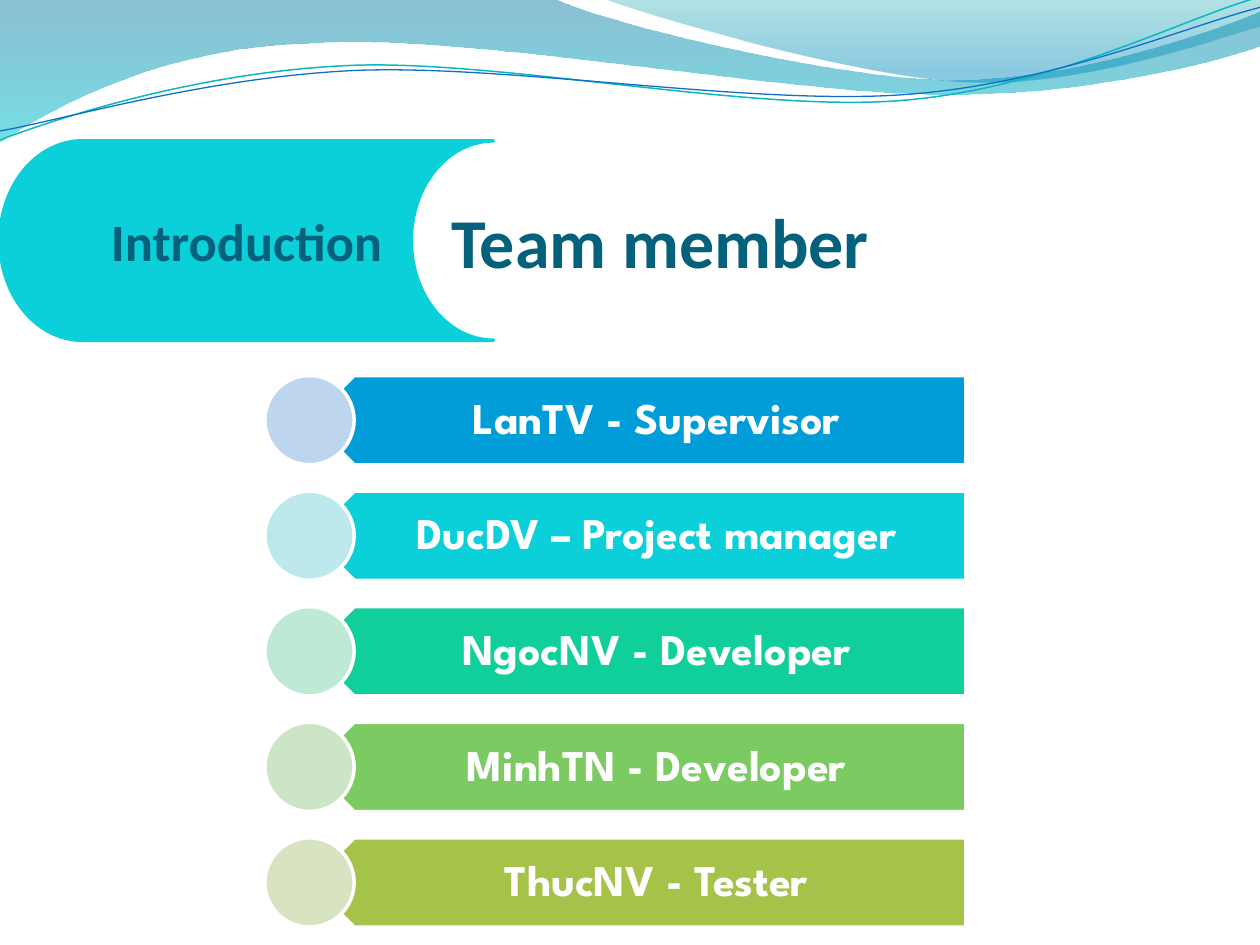
from math import cos, radians, sin

from lxml.etree import SubElement
from pptx import Presentation
from pptx.dml.color import RGBColor
from pptx.enum.shapes import MSO_SHAPE as Preset
from pptx.enum.text import MSO_ANCHOR as Anchor, PP_ALIGN as Align
from pptx.oxml.ns import qn
from pptx.util import Cm, Pt

COLORS = {
    "white": "FFFFFF", "heading": "04617B", "tab": "0BD0D9",
    "teal line": "0AB8BF", "blue line": "0F6FC6",
}

# name and role, bar colour, circle colour
MEMBERS = [
    ("LanTV - Supervisor", "009DD9", "BDD5ED"),
    ("DucDV – Project manager", "0BD0D9", "BDE9ED"),
    ("NgocNV - Developer", "10CF9B", "BDE9D5"),
    ("MinhTN - Developer", "7CCA62", "CCE6C5"),
    ("ThucNV - Tester", "A5C249", "D8E3C1"),
]

# Outlines in cm: a list of one point is a corner, of three a Bezier segment.
# Gradient stops: position, colour, opacity in percent.
WAVES = [
    ([[(0, 0)], [(11.18, -0.03)],
      [(12.09, 0.43), (16.87, 1.6), (19.25, 1.6)],
      [(21.67, 1.6), (24.33, 0.66), (25.4, 0.23)],
      [(25.43, 0.91)],
      [(24.97, 1.12), (22.1, 1.93), (18.95, 1.9)],
      [(15.8, 1.9), (9.7, 0.71), (6.53, 0.86)],
      [(3.28, 0.91), (1.17, 2.11), (-0.03, 2.87)],
      [(0, 0)]],
     [(0, "0074A1", 45), (1, "00C6CF", 55)]),
    ([[(12.17, -0.03)],
      [(12.93, 0.28), (17.32, 1.57), (19.53, 1.65)],
      [(21.74, 1.75), (24.41, 0.81), (25.4, 0.53)],
      [(25.4, 0)], [(12.17, -0.03)]],
     [(0, "00A1A9", 30), (0.8, "008BBF", 45)]),
]
# outline as seen, centre of its frame, colour, width
STRANDS = [
    ([[(0, 2.82)],
      [(1.22, 2.36), (4.01, 1.45), (7.04, 1.32)],
      [(10.03, 1.19), (15.06, 2.26), (18.11, 2.03)],
      [(21.16, 1.8), (23.83, 0.38), (25.35, -0.05)]],
     (12.67, 1.46), "teal line", 0.85),
    ([[(0, 2.64)],
      [(1.19, 2.44), (4.17, 1.55), (7.19, 1.42)],
      [(10.24, 1.3), (15.16, 2.13), (18.21, 1.91)],
      [(21.23, 1.7), (23.9, 0.53), (25.4, 0.15)]],
     (12.69, 1.5), "blue line", 0.75),
]
STRAND_TILT = 2.7

ROW_TOP, ROW_PITCH, ROW_HEIGHT = 7.57, 2.33, 1.8
CIRCLE_LEFT, BAR_LEFT, BAR_WIDTH = 5.34, 6.24, 13.23
LABEL_LEFT, LABEL_WIDTH = 6.69, 12.78


def rgb(color):
    return RGBColor.from_string(COLORS.get(color, color))


def turn(point, centre, degrees):
    """Turn a point clockwise about a centre."""
    x, y = point[0] - centre[0], point[1] - centre[1]
    c, s = cos(radians(degrees)), sin(radians(degrees))
    return centre[0] + x * c - y * s, centre[1] + x * s + y * c


def add_outline(shapes, outline, close):
    """Draw all points as corners, then join each three into a curve."""
    points = [(Cm(x), Cm(y)) for part in outline for x, y in part]
    builder = shapes.build_freeform(*points[0])
    builder.add_line_segments(points[1:], close=close)
    shape = builder.convert_to_shape()
    shape.shadow.inherit = False
    corners = iter(list(shape.element.iter(qn("a:lnTo"))))
    for part in outline[1:]:
        first, *others = [next(corners) for _ in part]
        if others:
            first.tag = qn("a:cubicBezTo")
        for other in others:
            first.append(other[0])
            other.getparent().remove(other)
    return shape


def add_wave(shapes, outline, stops):
    wave = add_outline(shapes, outline, True)
    wave.line.fill.background()
    wave.fill.gradient()
    wave.fill.gradient_angle = 270
    for stop, (position, color, _) in zip(wave.fill.gradient_stops, stops):
        stop.position = position
        stop.color.rgb = rgb(color)
    for node, (_, _, opacity) in zip(wave.element.iter(qn("a:srgbClr")), stops):
        SubElement(node, qn("a:alpha"), val=str(opacity * 1000))


def add_strand(shapes, outline, centre, color, width):
    level = [[turn(point, centre, STRAND_TILT) for point in part]
             for part in outline]
    strand = add_outline(shapes, level, False)
    strand.rotation = 360 - STRAND_TILT
    strand.fill.background()
    strand.line.color.rgb = rgb(color)
    strand.line.width = Pt(width)


def add_preset(shapes, preset, box, fill, line):
    shape = shapes.add_shape(preset, *map(Cm, box))
    shape.shadow.inherit = False
    shape.fill.solid()
    shape.fill.fore_color.rgb = rgb(fill)
    shape.line.color.rgb = rgb(line)
    shape.line.width = Pt(2)
    return shape


def write(shape, text, font, size, color, align, anchor, insets=None):
    frame = shape.text_frame
    frame.word_wrap = True
    frame.vertical_anchor = anchor
    if insets:
        (frame.margin_left, frame.margin_top,
         frame.margin_right, frame.margin_bottom) = map(Cm, insets)
    para = frame.paragraphs[0]
    para.text = text
    para.alignment = align
    para.font.name = font
    para.font.size = Pt(size)
    para.font.bold = True
    para.font.color.rgb = rgb(color)
    return para


def add_member(shapes, top, label, bar_color, circle_color):
    bar = add_preset(shapes, Preset.PENTAGON,
                     (BAR_LEFT, top, BAR_WIDTH, ROW_HEIGHT), bar_color, "white")
    bar.rotation = 180
    box = shapes.add_textbox(
        *map(Cm, (LABEL_LEFT, top, LABEL_WIDTH, ROW_HEIGHT)))
    para = write(box, label, "League Spartan", 25, "white", Align.CENTER,
                 Anchor.MIDDLE, (0.79, 0.25, 0.48, 0.25))
    para.line_spacing = 0.9
    add_preset(shapes, Preset.OVAL,
               (CIRCLE_LEFT, top, ROW_HEIGHT, ROW_HEIGHT), circle_color, "white")


def main():
    deck = Presentation()
    deck.slide_width, deck.slide_height = Cm(25.4), Cm(19.05)
    page = deck.slides.add_slide(deck.slide_layouts[6])

    for wave in WAVES:
        add_wave(page.shapes, *wave)
    strands = page.shapes.add_group_shape()
    for strand in STRANDS:
        add_strand(strands.shapes, *strand)
    team = page.shapes.add_group_shape()
    for row, member in enumerate(MEMBERS):
        add_member(team.shapes, ROW_TOP + row * ROW_PITCH, *member)

    title = page.shapes.add_textbox(*map(Cm, (9.1, 3.38, 22.86, 2.31)))
    write(title, "Team member", "Calibri", 40, "heading", Align.LEFT,
          Anchor.BOTTOM, (0, 0.13, 0, 0))
    tab = add_preset(page.shapes, Preset.FLOWCHART_STORED_DATA,
                     (0, 2.84, 9.95, 4.02), "tab", "tab")
    write(tab, "Introduction", "Calibri", 30, "heading", Align.CENTER,
          Anchor.MIDDLE)

    deck.save("out.pptx")


if __name__ == "__main__":
    main()
